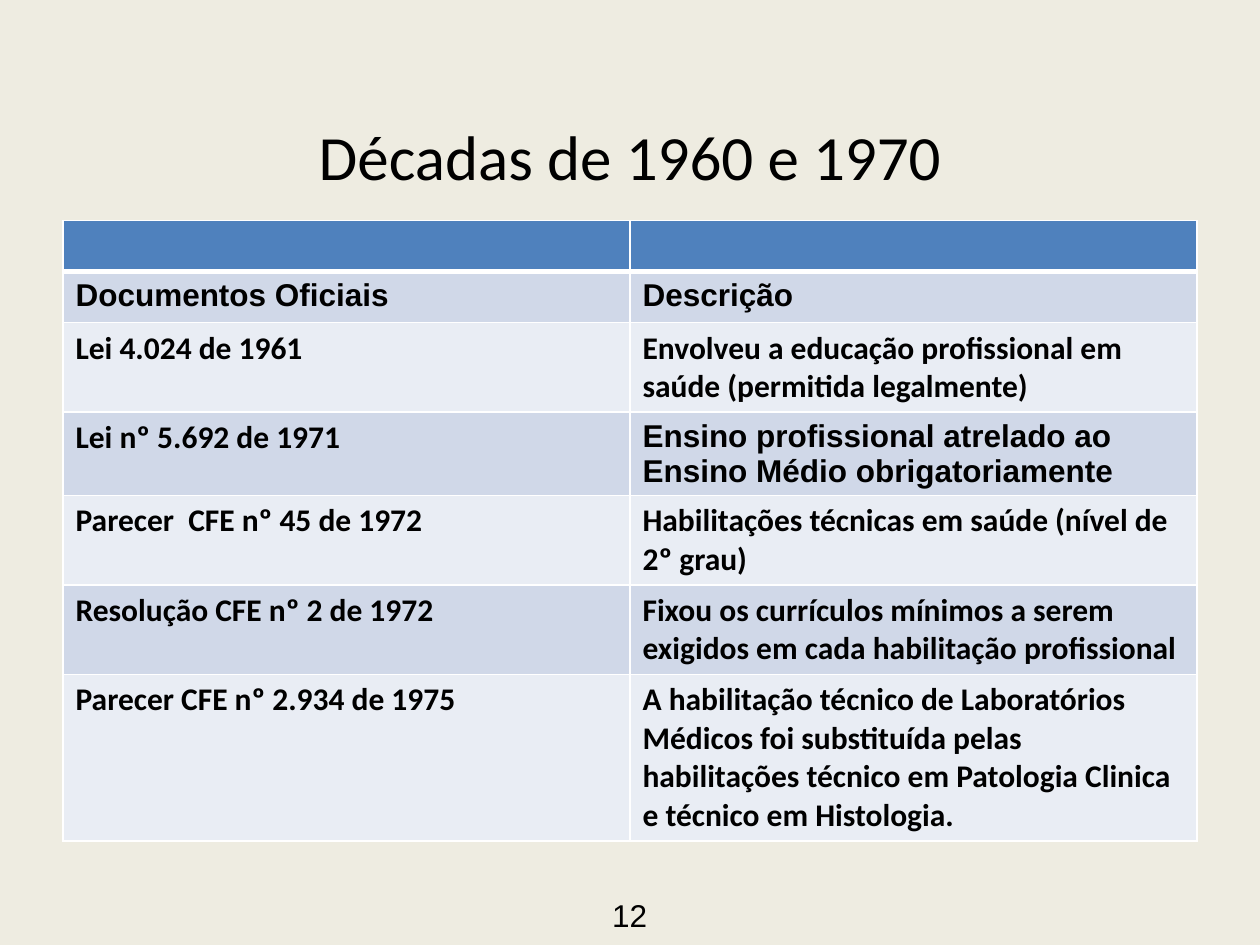
import pptx
import pptx.util
import pptx.dml.color
import pptx.enum.text
import pptx.oxml
import pptx.oxml.ns
import lxml.etree

Pt = pptx.util.Pt
ALIGN = pptx.enum.text.PP_ALIGN
ANCHOR = pptx.enum.text.MSO_ANCHOR

HEADER_FILL = "4F81BD"
BAND_FILLS = ["D0D8E8", "E9EDF4"]

# Each row: (text, font) for the document and for its description
ROWS = [
    [("Documentos Oficiais", "Arial"), ("Descrição", "Arial")],
    [("Lei 4.024 de 1961", "Calibri"),
     ("Envolveu a educação profissional em saúde (permitida legalmente)", "Calibri")],
    [("Lei nº 5.692 de 1971", "Calibri"),
     ("Ensino profissional atrelado ao Ensino Médio obrigatoriamente", "Arial")],
    [("Parecer  CFE nº 45 de 1972", "Calibri"),
     ("Habilitações técnicas em saúde (nível de 2º grau)", "Calibri")],
    [("Resolução CFE nº 2 de 1972", "Calibri"),
     ("Fixou os currículos mínimos a serem exigidos em cada habilitação profissional",
      "Calibri")],
    [("Parecer CFE nº 2.934 de 1975", "Calibri"),
     ("A habilitação técnico de Laboratórios Médicos foi substituída pelas "
      "habilitações técnico em Patologia Clinica e técnico em Histologia.", "Calibri")],
]


def rgb(hex_color):
    return pptx.dml.color.RGBColor.from_string(hex_color)


def set_fill(fill, hex_color):
    fill.solid()
    fill.fore_color.rgb = rgb(hex_color)


def set_attrs(obj, values):
    for name, value in values.items():
        setattr(obj, name, value)


def write(tf, text, font, size, bold=False, align=ALIGN.LEFT):
    p = tf.paragraphs[0]
    p.alignment = align
    r = p.add_run()
    r.text = text
    set_attrs(r.font, {"name": font, "size": Pt(size), "bold": bold})
    r.font.color.rgb = rgb("000000")


def set_borders(cell, hex_color, widths):
    """Add cell borders; widths maps each side (L, R, T, B) to points."""
    tc_pr = cell._tc.get_or_add_tcPr()
    for side, width in widths.items():
        ln = lxml.etree.SubElement(tc_pr, pptx.oxml.ns.qn(f"a:ln{side}"), w=str(Pt(width)))
        fill = lxml.etree.SubElement(ln, pptx.oxml.ns.qn("a:solidFill"))
        lxml.etree.SubElement(fill, pptx.oxml.ns.qn("a:srgbClr"), val=hex_color)


def add_title(s, left, top, width, height):
    sp = s.shapes.title
    set_attrs(sp, {"left": Pt(left), "top": Pt(top),
                   "width": Pt(width), "height": Pt(height)})
    tf = sp.text_frame
    # The top inset lowers the title by one line
    set_attrs(tf, {"word_wrap": True, "vertical_anchor": ANCHOR.MIDDLE,
                   "margin_top": Pt(47.6)})
    write(tf, "Décadas de 1960 e 1970", "Calibri", 36, align=ALIGN.CENTER)


def add_documents_table(s, left, top, width, row_height):
    count = len(ROWS) + 1
    table = s.shapes.add_table(count, 2, Pt(left), Pt(top), Pt(width),
                               Pt(row_height * count)).table
    for column in table.columns:
        column.width = Pt(width / 2)
    for i, row in enumerate(table.rows):
        row.height = Pt(row_height)
        for j, cell in enumerate(row.cells):
            # A thick rule separates the empty header from the body
            set_borders(cell, "FFFFFF", {"L": 1, "R": 1, "T": 3 if i == 1 else 1,
                                         "B": 3 if i == 0 else 1})
            set_fill(cell.fill, BAND_FILLS[(i - 1) % 2] if i else HEADER_FILL)
            if i:
                text, font = ROWS[i - 1][j]
                write(cell.text_frame, text, font, 18, bold=True)


def add_page_number(s, left, top, width, height):
    sp = s.shapes.add_textbox(Pt(left), Pt(top), Pt(width), Pt(height))
    tf = sp.text_frame
    set_attrs(tf, {"word_wrap": False,
                   "auto_size": pptx.enum.text.MSO_AUTO_SIZE.SHAPE_TO_FIT_TEXT})
    write(tf, "12", "Arial", 18)


def main():
    prs = pptx.Presentation()
    set_attrs(prs, {"slide_width": Pt(720), "slide_height": Pt(540)})
    s = prs.slides.add_slide(prs.slide_layouts[5])
    set_fill(s.background.fill, "EEECE1")
    add_title(s, 36, 21.6, 648, 90)
    add_documents_table(s, 36, 126, 648, 29.2)
    add_page_number(s, 342.7, 508.3, 34.6, 28.8)
    prs.save("out.pptx")


if __name__ == "__main__":
    main()
